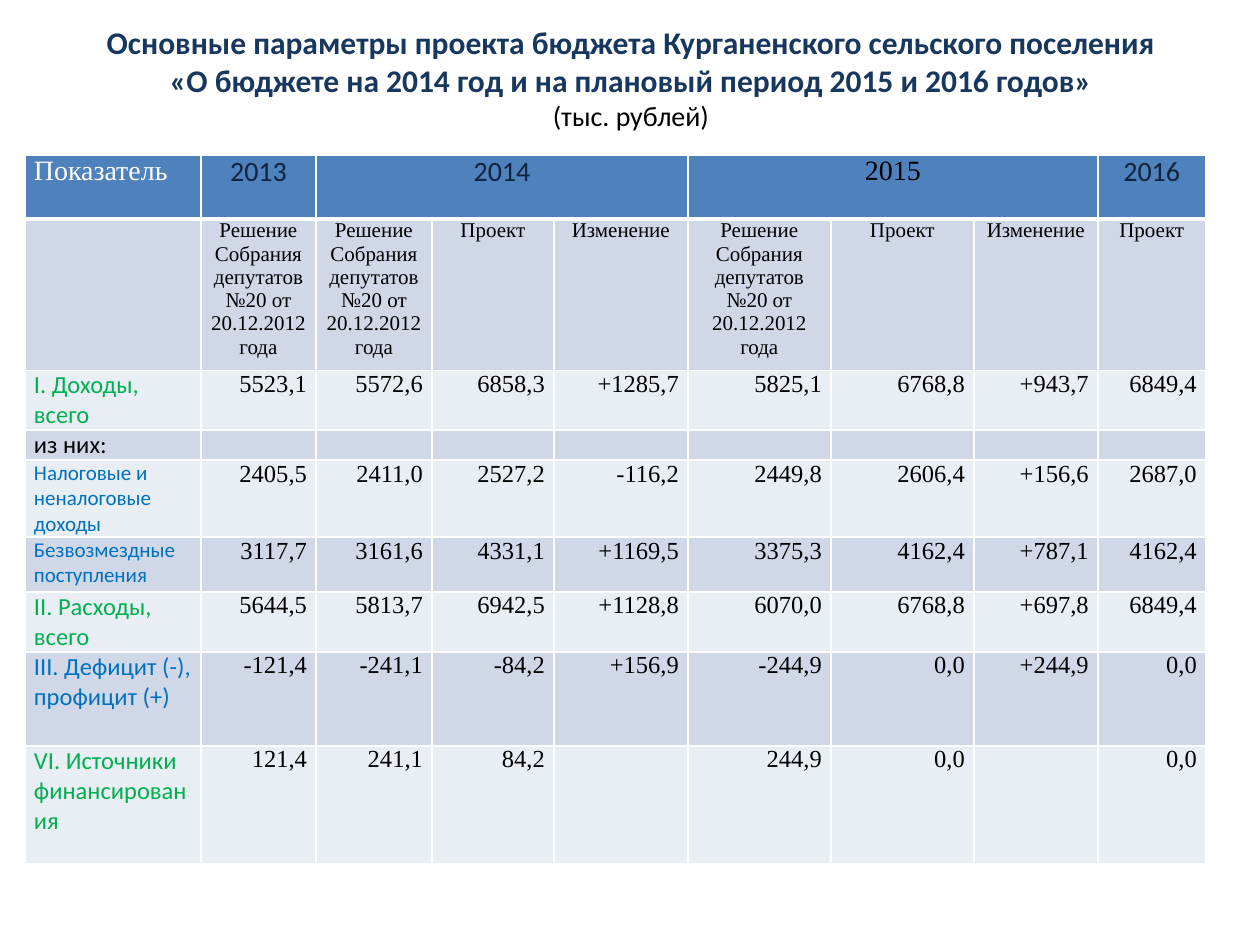
from lxml import etree
from pptx import Presentation
from pptx.dml.color import RGBColor
from pptx.enum.text import MSO_ANCHOR, PP_ALIGN
from pptx.oxml.ns import qn

PX = 914400 // 126
PT = 12700
LEFT, MID, RIGHT = PP_ALIGN.LEFT, PP_ALIGN.CENTER, PP_ALIGN.RIGHT
SANS, SERIF = "Calibri", "Times New Roman"
BLACK, WHITE, NAVY = "000000", "FFFFFF", "0F243E"
GREEN, BLUE = "00B050", "0070C0"
HEAD, DARK, LIGHT = "4F81BD", "D0D8E8", "E9EDF4"


def style(run, size, font, color, bold=False):
    run.font.size = size * PT
    run.font.name = font
    run.font.color.rgb = RGBColor.from_string(color)
    run.font.bold = bold


def edge(cell, widths):
    """Draw white borders; widths in points run left, right, top, bottom."""
    props = cell._tc.get_or_add_tcPr()
    for i, (side, width) in enumerate(zip("LRTB", widths)):
        line = etree.Element(qn("a:ln" + side), w=str(width * PT))
        fill = etree.SubElement(line, qn("a:solidFill"))
        etree.SubElement(fill, qn("a:srgbClr"), val=WHITE)
        props.insert(i, line)


prs = Presentation()
prs.slide_width, prs.slide_height = 9144000, 6858000
slide = prs.slides.add_slide(prs.slide_layouts[6])

# Title
box = slide.shapes.add_textbox(64 * PX, 0, 1134 * PX, 155 * PX)
frame = box.text_frame
frame.word_wrap = True
frame.vertical_anchor = MSO_ANCHOR.MIDDLE
para = frame.paragraphs[0]
para.text = (
    "Основные параметры проекта бюджета Курганенского сельского поселения\v"
    "«О бюджете на 2014 год и на плановый период 2015 и 2016 годов»\v"
    "(тыс. рублей)"
)
para.alignment = MID
for run in para.runs[:2]:
    style(run, 18, SANS, "17375E", True)
style(para.runs[2], 16, SANS, BLACK)

# Budget table
law = "Решение Собрания депутатов №20 от 20.12.2012 года"
plan, diff = "Проект", "Изменение"
rows = [
    ["Показатель", "2013", "2014", "", "", "2015", "", "", "2016"],
    ["", law, law, plan, diff, law, plan, diff, plan],
    ["I. Доходы, всего", "5523,1", "5572,6", "6858,3", "+1285,7",
     "5825,1", "6768,8", "+943,7", "6849,4"],
    ["из них:"] + [""] * 8,
    ["Налоговые и неналоговые доходы", "2405,5", "2411,0", "2527,2", "-116,2",
     "2449,8", "2606,4", "+156,6", "2687,0"],
    ["Безвозмездные поступления", "3117,7", "3161,6", "4331,1", "+1169,5",
     "3375,3", "4162,4", "+787,1", "4162,4"],
    ["II. Расходы, всего", "5644,5", "5813,7", "6942,5", "+1128,8",
     "6070,0", "6768,8", "+697,8", "6849,4"],
    ["III. Дефицит (-), профицит (+)", "-121,4", "-241,1", "-84,2", "+156,9",
     "-244,9", "0,0", "+244,9", "0,0"],
    ["VI. Источники финансирования", "121,4", "241,1", "84,2", "",
     "244,9", "0,0", "", "0,0"],
]
wide = [176, 115, 116, 122, 134, 143, 143, 124, 108]
high = [64, 151, 60, 30, 77, 55, 60, 94, 118]
# Size and colour of the row labels, from the third row on
labels = [(14, GREEN), (14, BLACK), (12, BLUE), (12, BLUE),
          (14, GREEN), (14, BLUE), (14, GREEN)]
heads = {0: (SERIF, WHITE), 5: (SERIF, BLACK)}

table = slide.shapes.add_table(
    len(rows), len(wide), 25 * PX, 155 * PX, sum(wide) * PX, sum(high) * PX
).table
for col, width in zip(table.columns, wide):
    col.width = width * PX
for row, height in zip(table.rows, high):
    row.height = height * PX

for r, row in enumerate(rows):
    for c, text in enumerate(row):
        cell = table.cell(r, c)
        cell.margin_left = cell.margin_right = 9 * PX
        cell.margin_top = cell.margin_bottom = 0
        cell.fill.solid()
        shade = HEAD if r == 0 else DARK if r % 2 else LIGHT
        cell.fill.fore_color.rgb = RGBColor.from_string(shade)
        edge(cell, (1, 1, 3 if r == 1 else 1, 3 if r == 0 else 1))

        para = cell.text_frame.paragraphs[0]
        if not text:
            end = etree.SubElement(para._p, qn("a:endParaRPr"))
            end.set("sz", "1200")
            continue
        para.text = text
        if r == 0:
            font, color = heads.get(c, (SANS, NAVY))
            size, align = 16, MID if c else LEFT
        elif r == 1:
            size, font, color, align = 12, SERIF, BLACK, MID
        elif c == 0:
            size, color = labels[r - 2]
            font, align = SANS, LEFT
        else:
            size, font, color, align = 14, SERIF, BLACK, RIGHT
        para.alignment = align
        style(para.runs[0], size, font, color)

for c in (2, 5):
    table.cell(0, c).merge(table.cell(0, c + 2))

prs.save("out.pptx")
